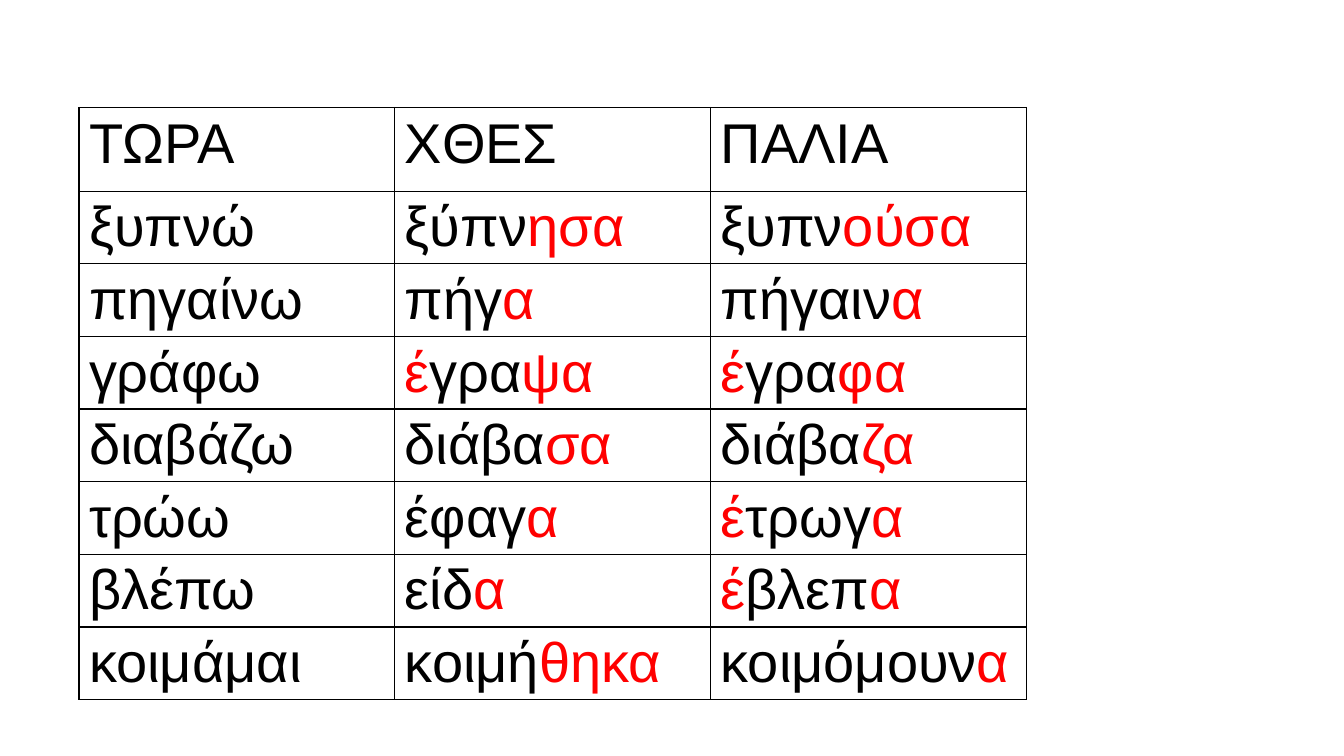
from dataclasses import astuple, dataclass

from lxml.etree import SubElement
from pptx import Presentation
from pptx.dml.color import RGBColor as Color
from pptx.oxml.ns import qn
from pptx.slide import Slide
from pptx.table import Table, _Cell as Cell
from pptx.util import Pt


@dataclass(frozen=True)
class Theme:
    font: str = "Arial"
    size: float = 40
    ink: str = "000000"
    accent: str = "FF0000"
    border_width: float = 1


@dataclass(frozen=True)
class VerbRow:
    now: str
    yesterday: str
    formerly: str


THEME = Theme()
ACCENT_MARK = "|"
TABLE_LEFT, TABLE_TOP = 56.4, 76.8
COLUMN_WIDTH = 225.6
HEADER_HEIGHT, VERB_HEIGHT = 59.8, 51.8

VERB_ROWS = [
    VerbRow("ΤΩΡΑ", "ΧΘΕΣ", "ΠΑΛΙΑ"),
    VerbRow("ξυπνώ", "ξύπν|ησα", "ξυπν|ούσα"),
    VerbRow("πηγαίνω", "πήγ|α", "πήγαιν|α"),
    VerbRow("γράφω", "|έ|γρα|ψα", "|έ|γρα|φα"),
    VerbRow("διαβάζω", "διάβα|σα", "διάβα|ζα"),
    VerbRow("τρώω", "έφαγ|α", "|έ|τρωγ|α"),
    VerbRow("βλέπω", "είδ|α", "|έ|βλεπ|α"),
    VerbRow("κοιμάμαι", "κοιμή|θηκα", "κοιμόμουν|α"),
]


def draw_borders(cell: Cell) -> None:
    properties = cell._tc.get_or_add_tcPr()
    for position, side in enumerate(("a:lnL", "a:lnR", "a:lnT", "a:lnB")):
        line = SubElement(properties, qn(side), w=str(Pt(THEME.border_width)))
        fill = SubElement(line, qn("a:solidFill"))
        SubElement(fill, qn("a:srgbClr"), val=THEME.ink)
        properties.insert(position, line)


def write_word(cell: Cell, word: str) -> None:
    para = cell.text_frame.paragraphs[0]
    font_format = {"name": THEME.font, "size": Pt(THEME.size), "bold": False}
    for index, piece in enumerate(word.split(ACCENT_MARK)):
        if not piece:
            continue
        span = para.add_run()
        span.text = piece
        for name, value in font_format.items():
            setattr(span.font, name, value)
        color = THEME.accent if index % 2 else THEME.ink
        span.font.color.rgb = Color.from_string(color)


def add_verb_table(page: Slide, rows: list[VerbRow]) -> Table:
    words = [astuple(row) for row in rows]
    column_count = len(words[0])
    heights = [HEADER_HEIGHT] + [VERB_HEIGHT] * (len(rows) - 1)
    frame = page.shapes.add_table(
        len(rows), column_count, Pt(TABLE_LEFT), Pt(TABLE_TOP),
        Pt(COLUMN_WIDTH * column_count), Pt(sum(heights)),
    )
    table = frame.table
    table_format = {"first_row": False, "horz_banding": False}
    for name, value in table_format.items():
        setattr(table, name, value)
    for column in table.columns:
        column.width = Pt(COLUMN_WIDTH)
    for row, height, row_words in zip(table.rows, heights, words):
        row.height = Pt(height)
        for cell, word in zip(row.cells, row_words):
            cell.fill.background()
            draw_borders(cell)
            write_word(cell, word)
    return table


def main() -> None:
    deck = Presentation()
    deck.slide_width, deck.slide_height = Pt(960), Pt(540)
    page = deck.slides.add_slide(deck.slide_layouts[6])
    add_verb_table(page, VERB_ROWS)
    deck.save("out.pptx")


if __name__ == "__main__":
    main()
